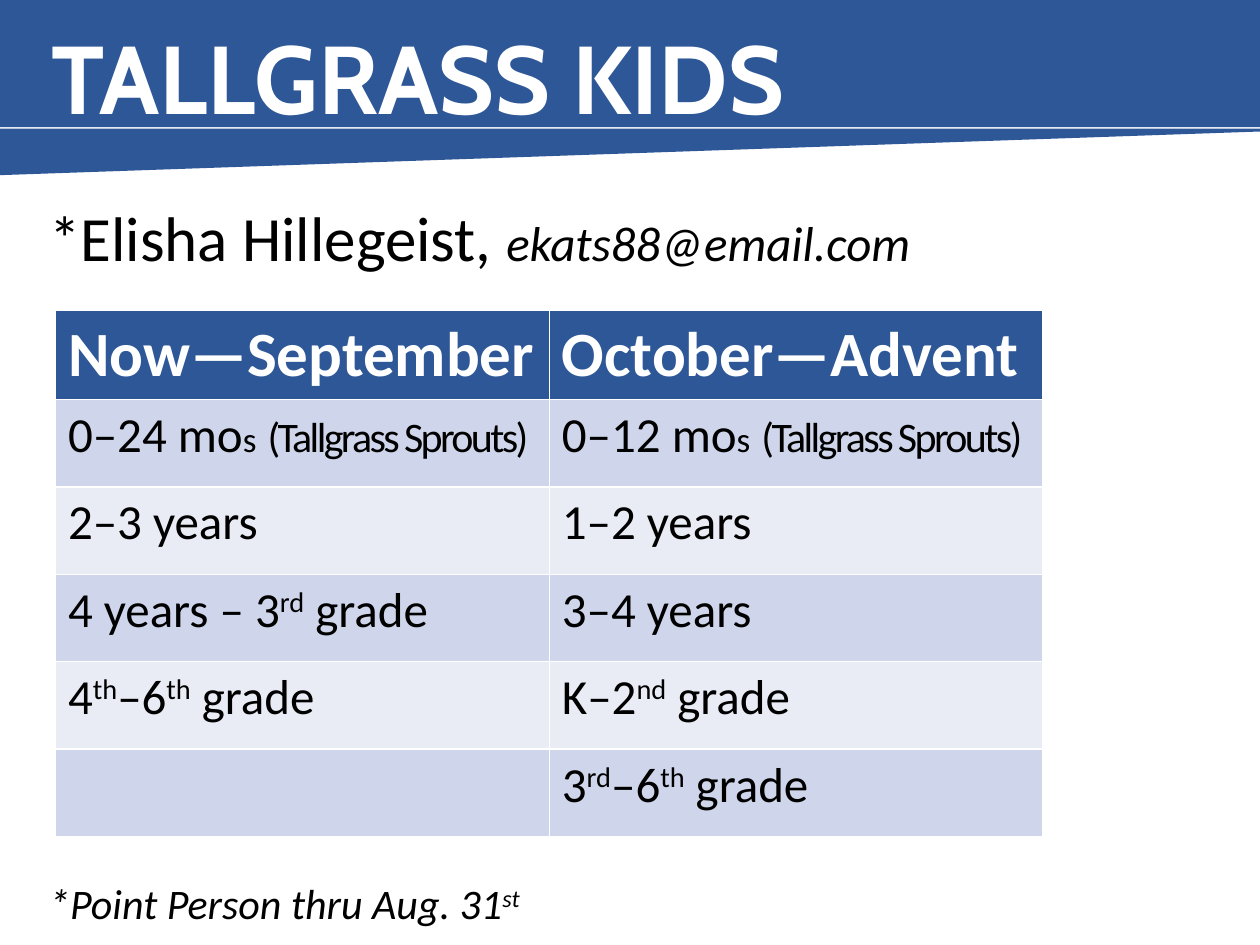
"""Build the Tallgrass Kids age-group slide."""
from pptx import Presentation
from pptx.dml.color import RGBColor
from pptx.enum.shapes import MSO_SHAPE as SHAPE
from pptx.enum.text import MSO_ANCHOR as ANCHOR, MSO_AUTO_SIZE as AUTO, PP_ALIGN as ALIGN
from pptx.util import Inches, Pt
from lxml.etree import SubElement
from pptx.oxml.ns import qn

BLUE = RGBColor(0x2E, 0x57, 0x97)
WHITE = RGBColor(0xFF, 0xFF, 0xFF)
BLACK = RGBColor(0, 0, 0)
BANDS = [RGBColor(0xCF, 0xD5, 0xEA), RGBColor(0xE9, 0xEB, 0xF5)]

SUPER = {"baseline": "30000"}
TIGHT = {"spc": "-150"}
TITLE = "TALLGRASS KIDS"
CONTACT = [("*Elisha Hillegeist, ", 36, False, {}), ("ekats88@email.com", 28, True, {})]
NOTE = [("*Point Person thru Aug. 31", 24, True, {}), ("st", 24, True, SUPER)]
HEADERS = ["Now—September", "October—Advent"]
SPROUTS = [("s", 20, {}), (" ", 28, {}), ("(Tallgrass Sprouts)", 24, TIGHT)]
TH, RD, ND = [(suffix, 28, SUPER) for suffix in ("th", "rd", "nd")]
GRADE = (" grade", 28, {})
TO_SIXTH = [("–6", 28, {}), TH, GRADE]
ROWS = [
    ([("0–24 mo", 28, {})] + SPROUTS, [("0–12 mo", 28, {})] + SPROUTS),
    ([("2–3 years", 28, {})], [("1–2 years", 28, {})]),
    ([("4 years – 3", 28, {}), RD, GRADE], [("3–4 years", 28, {})]),
    ([("4", 28, {}), TH] + TO_SIXTH, [("K–2", 28, {}), ND, GRADE]),
    ([], [("3", 28, {}), RD] + TO_SIXTH),
]


def place(sp, left, top, width, height):
    sp.left, sp.top, sp.width, sp.height = map(Inches, (left, top, width, height))


def add_run(p, text, size, color=BLACK, bold=False, italic=False, font="Calibri", attrs={}):
    r = p.add_run()
    r.text = text
    r.font.size, r.font.name = Pt(size), font
    r.font.bold, r.font.italic = bold, italic
    r.font.color.rgb = color
    for name, value in attrs.items():
        r.font._element.set(name, value)


def add_band(s, kind, index, box):
    sp = s.shapes.add_shape(kind, *map(Inches, box))
    sp.shadow.inherit = False
    sp.fill.solid()
    sp.fill.fore_color.rgb = BLUE
    sp.line.fill.background()
    s.shapes._spTree.insert(index, sp._element)
    return sp


def add_header(s):
    slope = add_band(s, SHAPE.ISOSCELES_TRIANGLE, 2, (0, 1.02, 10.68, 0.37))
    slope.adjustments[0] = 0
    slope.rotation = 180
    slope._element.spPr.xfrm.set("flipH", "1")
    add_band(s, SHAPE.RECTANGLE, 3, (0, -0.07, 10, 1.08))
    title = s.shapes.title
    place(title, 0.31, 0.16, 9.6, 1.01)
    tf = title.text_frame
    tf.auto_size, tf.vertical_anchor = AUTO.NONE, ANCHOR.MIDDLE
    p = tf.paragraphs[0]
    p.alignment, p.line_spacing = ALIGN.LEFT, 0.9
    add_run(p, TITLE, 55, WHITE, bold=True, font="Cabin")


def add_body(s):
    body = s.placeholders[1]
    place(body, 0.29, 1.64, 9.6, 6.27)
    tf = body.text_frame
    tf.auto_size, tf.vertical_anchor = AUTO.NONE, ANCHOR.TOP
    for p, runs, gap in ((tf.paragraphs[0], CONTACT, 0), (tf.add_paragraph(), NOTE, 351)):
        pPr = p._p.get_or_add_pPr()
        pPr.set("marL", "0")
        pPr.set("indent", "0")
        SubElement(pPr, qn("a:buNone"))
        p.line_spacing, p.space_before = 0.8, Pt(gap)
        for text, size, italic, attrs in runs:
            add_run(p, text, size, italic=italic, attrs=attrs)


def add_schedule(s):
    box = map(Inches, (0.44, 2.46, 7.84, 4.16))
    table = s.shapes.add_table(len(ROWS) + 1, len(HEADERS), *box).table
    for col, header in enumerate(HEADERS):
        cell = table.cell(0, col)
        cell.fill.solid()
        cell.fill.fore_color.rgb = BLUE
        add_run(cell.text_frame.paragraphs[0], header, 36, WHITE, bold=True)
    for row, cells in enumerate(ROWS):
        for col, runs in enumerate(cells):
            cell = table.cell(row + 1, col)
            cell.fill.solid()
            cell.fill.fore_color.rgb = BANDS[row % 2]
            for text, size, attrs in runs:
                add_run(cell.text_frame.paragraphs[0], text, size, attrs=attrs)


def main():
    prs = Presentation()
    prs.slide_width, prs.slide_height = Inches(10), Inches(7.5)
    s = prs.slides.add_slide(prs.slide_layouts[1])
    add_header(s)
    add_body(s)
    add_schedule(s)
    prs.save("out.pptx")


if __name__ == "__main__":
    main()
